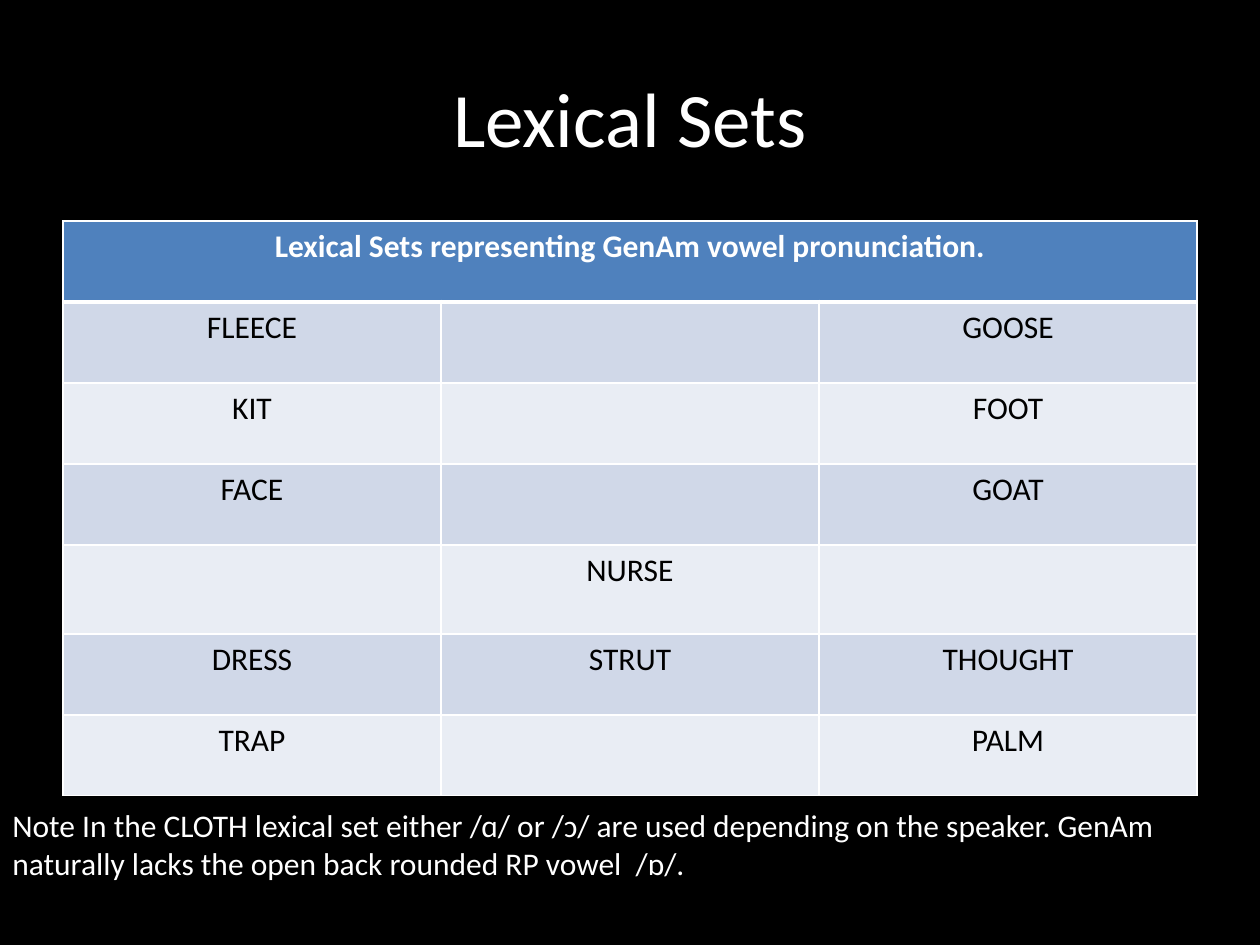
from dataclasses import dataclass

from lxml import etree
from pptx import Presentation
from pptx.dml.color import RGBColor
from pptx.enum.text import MSO_ANCHOR, MSO_AUTO_SIZE, PP_ALIGN
from pptx.oxml.ns import qn
from pptx.util import Emu, Pt

CENTER, LEFT = PP_ALIGN.CENTER, PP_ALIGN.LEFT
MIDDLE = MSO_ANCHOR.MIDDLE
GROW = MSO_AUTO_SIZE.SHAPE_TO_FIT_TEXT
TITLE_ONLY = 5
PX_PER_INCH = 126


@dataclass(frozen=True)
class Theme:
    font: str = "Calibri"
    title_size: int = 44
    text_size: int = 18
    background: str = "000000"
    light: str = "FFFFFF"
    dark: str = "000000"
    header: str = "4F81BD"
    bands: tuple = ("D0D8E8", "E9EDF4")
    border: int = 1
    header_border: int = 3


THEME = Theme()
HEADING = "Lexical Sets representing GenAm vowel pronunciation."
VOWELS = [
    ("FLEECE", "", "GOOSE"),
    ("KIT", "", "FOOT"),
    ("FACE", "", "GOAT"),
    ("", "NURSE", ""),
    ("DRESS", "STRUT", "THOUGHT"),
    ("TRAP", "", "PALM"),
]
NOTE = ("Note In the CLOTH lexical set either /ɑ/ or /ɔ/ are used depending on "
        "the speaker. GenAm naturally lacks the open back rounded RP vowel  /ɒ/.")
ROW_HEIGHT, NURSE_HEIGHT = 81, 89
NURSE_ROW = 4


def px(n):
    return Emu(round(n * 914400 / PX_PER_INCH))


def write(tf, text, size, color, align, bold=False):
    tf.text = text
    p = tf.paragraphs[0]
    p.alignment = align
    for r in p.runs:
        r.font.name = THEME.font
        r.font.size = Pt(size)
        r.font.bold = bold
        r.font.color.rgb = RGBColor.from_string(color)


def set_borders(cell, top, bottom):
    # Border lines come before the fill in the cell properties
    tc_pr = cell._tc.get_or_add_tcPr()
    widths = {"a:lnL": THEME.border, "a:lnR": THEME.border,
              "a:lnT": top, "a:lnB": bottom}
    for i, (tag, width) in enumerate(widths.items()):
        ln = etree.Element(qn(tag), w=str(Pt(width)))
        fill = etree.SubElement(ln, qn("a:solidFill"))
        etree.SubElement(fill, qn("a:srgbClr"), val=THEME.light)
        tc_pr.insert(i, ln)


def style_cell(cell, row):
    is_header = row == 0
    color = THEME.header if is_header else THEME.bands[(row - 1) % 2]
    cell.fill.solid()
    cell.fill.fore_color.rgb = RGBColor.from_string(color)
    set_borders(cell,
                THEME.header_border if row == 1 else THEME.border,
                THEME.header_border if is_header else THEME.border)


def add_title(slide, text):
    title = slide.shapes.title
    title.left, title.top, title.width, title.height = map(px, (63, 38, 1134, 157))
    title.text_frame.vertical_anchor = MIDDLE
    write(title.text_frame, text, THEME.title_size, THEME.light, CENTER)


def add_vowel_table(slide):
    rows = [(HEADING, "", "")] + VOWELS
    heights = [NURSE_HEIGHT if i == NURSE_ROW else ROW_HEIGHT
               for i in range(len(rows))]
    table = slide.shapes.add_table(len(rows), 3, px(63), px(221), px(1134),
                                   px(sum(heights))).table
    for i, (words, height) in enumerate(zip(rows, heights)):
        table.rows[i].height = px(height)
        for j, word in enumerate(words):
            cell = table.cell(i, j)
            style_cell(cell, i)
            if word:
                write(cell.text_frame, word, THEME.text_size,
                      THEME.dark if i else THEME.light, CENTER, bold=i == 0)
    table.cell(0, 0).merge(table.cell(0, 2))


def add_note(slide, text):
    tf = slide.shapes.add_textbox(px(0), px(800), px(1260), px(89)).text_frame
    tf.word_wrap = True
    tf.auto_size = GROW
    write(tf, text, THEME.text_size, THEME.light, LEFT)


def main():
    prs = Presentation()
    prs.slide_width, prs.slide_height = px(1260), px(945)
    s = prs.slides.add_slide(prs.slide_layouts[TITLE_ONLY])
    s.background.fill.solid()
    s.background.fill.fore_color.rgb = RGBColor.from_string(THEME.background)
    add_title(s, "Lexical Sets")
    add_vowel_table(s)
    add_note(s, NOTE)
    prs.save("out.pptx")


if __name__ == "__main__":
    main()
